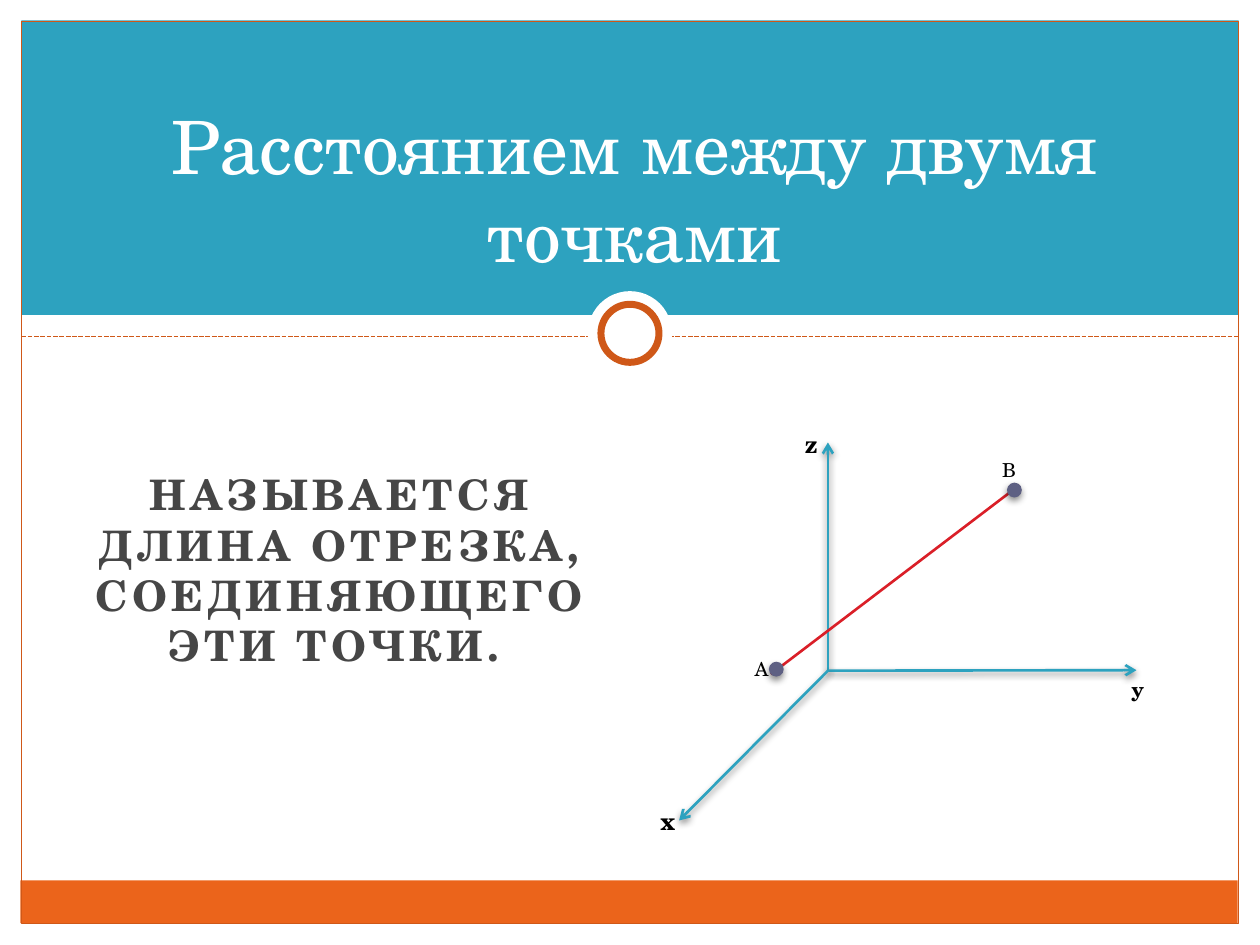
"""Build a slide that defines the distance between two points in space."""
from typing import NamedTuple

from lxml import etree
from pptx import Presentation
from pptx import util as u
from pptx.dml.color import RGBColor
from pptx.enum import dml, shapes, text
from pptx.oxml import ns

FONT = "TeX Gyre Schola"
WHITE = RGBColor(0xFF, 0xFF, 0xFF)
BLACK = RGBColor(0, 0, 0)
TEAL = RGBColor(0x2D, 0xA2, 0xBF)
ORANGE = RGBColor(0xEB, 0x64, 0x1B)
RUST = RGBColor(0xCF, 0x58, 0x18)
GREY = RGBColor(0x46, 0x46, 0x46)
RED = RGBColor(0xDA, 0x1F, 0x28)
SLATE = RGBColor(0x5E, 0x60, 0x83)


class Box(NamedTuple):
    left: float
    top: float
    width: float
    height: float


class Spot(NamedTuple):
    x: float
    y: float


class Label(NamedTuple):
    word: str
    box: Box
    size: int
    bold: bool


RECT = shapes.MSO_SHAPE.RECTANGLE
OVAL = shapes.MSO_SHAPE.OVAL
HUB = Spot(12.7, 6.72)
ZERO = Spot(16.69, 13.52)
TIPS = [Spot(16.69, 8.92), Spot(22.91, 13.51), Spot(13.69, 16.54)]
DOTS = [Spot(20.45, 9.88), Spot(15.65, 13.49)]
LABELS = [
    Label("х", Box(13.11, 16.13, 0.61, 0.86), 14, True),
    Label("у", Box(22.71, 13.51, 0.2, 0.76), 12, True),
    Label("z", Box(16.1, 8.53, 0.41, 0.86), 14, True),
    Label("A", Box(14.91, 13.13, 0.79, 0.74), 11, False),
    Label("B", Box(20.09, 9.12, 0.41, 0.74), 11, False),
]


def cast(props, shade: bool) -> None:
    """Give shape properties a soft shadow below, or none."""
    effects = etree.SubElement(props, ns.qn("a:effectLst"))
    if shade:
        outer = etree.SubElement(
            effects, ns.qn("a:outerShdw"), blurRad=str(u.Pt(4)),
            dist=str(u.Pt(2)), dir="5400000", rotWithShape="0")
        tone = etree.SubElement(outer, ns.qn("a:srgbClr"), val="000000")
        etree.SubElement(tone, ns.qn("a:alpha"), val="45000")


def draw(slide, kind, box: Box, fill=None, edge=None, width: float = 0, shade: bool = False):
    """Add a preset shape with an optional fill and outline."""
    shape = slide.shapes.add_shape(kind, *map(u.Cm, box))
    if fill is None:
        shape.fill.background()
    else:
        shape.fill.solid()
        shape.fill.fore_color.rgb = fill
    if edge is None:
        shape.line.fill.background()
    else:
        shape.line.color.rgb = edge
        shape.line.width = u.Pt(width)
    cast(shape.element.spPr, shade)
    return shape


def disc(slide, mid: Spot, size: float, fill, **style):
    """Add a circle around its centre."""
    box = Box(mid.x - size / 2, mid.y - size / 2, size, size)
    return draw(slide, OVAL, box, fill, **style)


def link(slide, start: Spot, end: Spot, tint: RGBColor, width: float = 1.5,
         axis: bool = False, dash=None) -> None:
    """Add a straight line; an axis has an arrowhead and a shadow."""
    line = slide.shapes.add_connector(
        shapes.MSO_CONNECTOR.STRAIGHT, *map(u.Cm, (*start, *end)))
    line.line.color.rgb = tint
    line.line.width = u.Pt(width)
    if dash is not None:
        line.line.dash_style = dash
    if axis:
        etree.SubElement(line.get_or_add_ln(), ns.qn("a:tailEnd"), type="arrow")
    cast(line.element.spPr, axis)


def write(shape, word: str, size: int, tint: RGBColor, bold: bool = False):
    """Put one centred paragraph into a shape and return its run."""
    frame = shape.text_frame
    frame.text = word
    para = frame.paragraphs[0]
    para.alignment = text.PP_ALIGN.CENTER
    run = para.runs[0]
    run.font.name = FONT
    run.font.size = u.Pt(size)
    run.font.bold = bold
    run.font.color.rgb = tint
    return run


def place(slide, shape, box: Box, anchor) -> None:
    """Move a placeholder to the front and to its box."""
    slide.shapes.element.append(shape.element)
    shape.left, shape.top, shape.width, shape.height = map(u.Cm, box)
    frame = shape.text_frame
    frame.auto_size = text.MSO_AUTO_SIZE.NONE
    frame.vertical_anchor = anchor
    frame.word_wrap = True


def tag(slide, label: Label) -> None:
    """Add the letter of an axis or a point."""
    shape = slide.shapes.add_textbox(*map(u.Cm, label.box))
    frame = shape.text_frame
    frame.word_wrap = False
    frame.margin_left, frame.margin_right = u.Cm(0.1), 0
    write(shape, label.word, label.size, BLACK, label.bold)


def main() -> None:
    """Draw the slide and save it."""
    deck = Presentation()
    deck.slide_width, deck.slide_height = u.Cm(25.4), u.Cm(19.05)
    slide = deck.slides.add_slide(deck.slide_layouts[0])

    draw(slide, RECT, Box(0.43, 0.41, 24.54, 5.94), TEAL)
    draw(slide, RECT, Box(0.41, 17.75, 24.54, 0.86), ORANGE)
    draw(slide, RECT, Box(0.43, 0.43, 24.54, 18.19), edge=RUST, width=0.75)
    link(slide, Spot(0.43, 6.78), Spot(24.97, 6.78), RUST, 0.9,
         dash=dml.MSO_LINE.SQUARE_DOT)
    disc(slide, HUB, 1.7, WHITE)
    disc(slide, HUB, 1.17, WHITE, edge=RUST, width=4)

    title, body = slide.placeholders
    place(slide, title, Box(2.01, 1.47, 21.59, 4.24), text.MSO_ANCHOR.BOTTOM)
    write(title, "Расстоянием между двумя точками", 42, WHITE)
    place(slide, body, Box(0.89, 9.32, 11.99, 4.8), text.MSO_ANCHOR.TOP)
    run = write(body, "НАЗЫВАЕТСЯ ДЛИНА ОТРЕЗКА, СОЕДИНЯЮЩЕГО ЭТИ ТОЧКИ. ",
                24, GREY, True)
    run._r.get_or_add_rPr().set("spc", "250")

    for tip in TIPS:
        link(slide, ZERO, tip, TEAL, axis=True)
    link(slide, Spot(15.54, 13.59), Spot(20.55, 9.78), RED)
    for label in LABELS:
        tag(slide, label)
    for dot in DOTS:
        disc(slide, dot, 0.3, SLATE, shade=True)
    deck.save("out.pptx")


if __name__ == "__main__":
    main()
